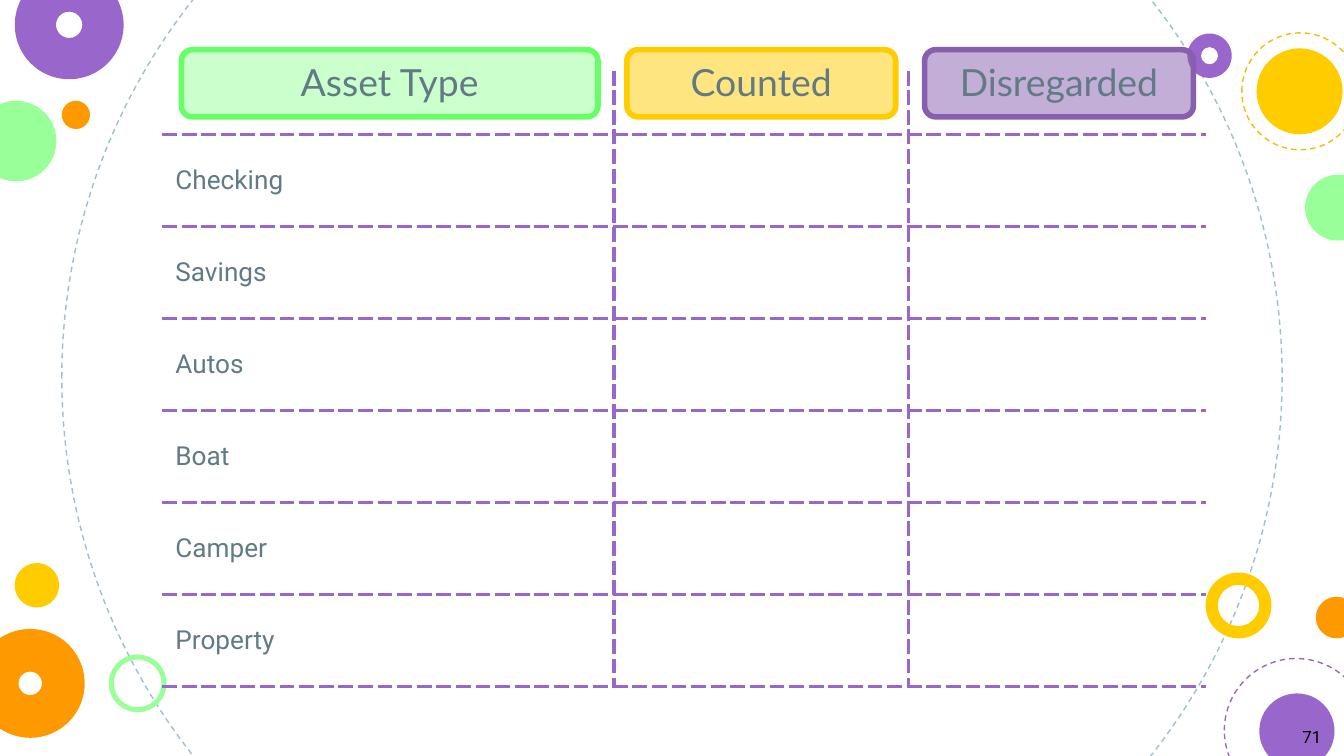
from lxml.etree import SubElement
from pptx import Presentation
from pptx.dml.color import RGBColor
from pptx.enum.dml import MSO_LINE_DASH_STYLE as Dash
from pptx.enum.shapes import MSO_SHAPE as Shape
from pptx.enum.text import MSO_ANCHOR as Anchor, PP_ALIGN as Align
from pptx.oxml.ns import qn
from pptx.util import Pt

PX = 4572
color = RGBColor.from_string
PURPLE, GREEN, YELLOW, ORANGE = "9966CC", "99FF99", "FFCC00", "FF9900"
SLATE = "617A86"


def add_shape(kind, box, fill=None, line=None, width=0.75):
    shape = slide.shapes.add_shape(kind, *[value * PX for value in box])
    shape.shadow.inherit = False
    if fill:
        shape.fill.solid()
        shape.fill.fore_color.rgb = color(fill)
    else:
        shape.fill.background()
    if line:
        shape.line.color.rgb = color(line)
        shape.line.width = Pt(width)
    else:
        shape.line.fill.background()
    return shape


def write(frame, text, size, font, text_color, align=Align.LEFT):
    paragraph = frame.paragraphs[0]
    paragraph.alignment = align
    run = paragraph.add_run()
    run.text = text
    for name, value in {"size": Pt(size), "name": font}.items():
        setattr(run.font, name, value)
    run.font.color.rgb = color(text_color)


presentation = Presentation()
presentation.slide_width = 2000 * PX
presentation.slide_height = 1125 * PX
slide = presentation.slides.add_slide(presentation.slide_layouts[6])

circles = [
    (92, -346, 1816, "ring", "A1BECC"),
    (-36, 150, 120, "disc", GREEN),
    (1794, 852, 98, 0.186, YELLOW),
    (22, -44, 162, 0.379, PURPLE),
    (92, 150, 42, "disc", ORANGE),
    (1822, 980, 214, "ring", PURPLE),
    (162, 974, 86, 0.088, GREEN),
    (1958, 888, 62, "disc", ORANGE),
    (-36, 936, 162, 0.392, ORANGE),
    (1874, 1032, 112, "disc", PURPLE),
    (1767, 50, 66, 0.306, PURPLE),
    (1870, 72, 128, "disc", YELLOW),
    (1942, 260, 98, "disc", GREEN),
    (1848, 49, 174, "ring", "F8BB00"),
    (22, 838, 66, "disc", YELLOW),
]
for left, top, size, style, circle_color in circles:
    box = (left, top, size, size)
    if style == "ring":
        add_shape(Shape.OVAL, box, line=circle_color).line.dash_style = Dash.DASH
    elif style == "disc":
        add_shape(Shape.OVAL, box, circle_color)
    else:
        add_shape(Shape.DONUT, box, circle_color).adjustments[0] = style

assets = ["", "Checking", "Savings", "Autos", "Boat", "Camper", "Property"]
column_widths = [673, 438, 442]
row_heights = [95] + [137] * 6
table = slide.shapes.add_table(
    len(assets), 3, 241 * PX, 105 * PX, sum(column_widths) * PX, sum(row_heights) * PX
).table
table.first_row = table.horz_banding = False
for column, width in zip(table.columns, column_widths):
    column.width = width * PX
for row_index, (row, height) in enumerate(zip(table.rows, row_heights)):
    row.height = height * PX
    for column_index, cell in enumerate(row.cells):
        cell.vertical_anchor = Anchor.MIDDLE
        sides = {"L": column_index > 0, "R": column_index < 2, "T": row_index > 0, "B": True}
        properties = cell._tc.get_or_add_tcPr()
        for side, visible in sides.items():
            border = SubElement(properties, qn(f"a:ln{side}"), w=str(Pt(2.25)))
            if visible:
                fill = SubElement(border, qn("a:solidFill"))
                SubElement(fill, qn("a:srgbClr"), val=PURPLE)
                SubElement(border, qn("a:prstDash"), val="sysDash")
            else:
                SubElement(border, qn("a:noFill"))
        cell.fill.background()
    if assets[row_index]:
        write(row.cells[0].text_frame, assets[row_index], 14, "Roboto", SLATE)

headers = [
    ("Asset Type", 270, 620, GREEN, "66FF66"),
    ("Counted", 933, 400, YELLOW, YELLOW),
    ("Disregarded", 1376, 400, "875FAF", "875FAF"),
]
for text, left, width, fill, line in headers:
    header = add_shape(Shape.ROUNDED_RECTANGLE, (left, 74, width, 100), fill, line, 3)
    fill_color = header.fill._xPr.find(qn("a:solidFill"))[0]
    SubElement(fill_color, qn("a:alpha"), val="50000")
    header.text_frame.vertical_anchor = Anchor.TOP
    write(header.text_frame, text, 20, "Lato", SLATE, Align.CENTER)

number_box = slide.shapes.add_textbox(1894 * PX, 1066 * PX, 92 * PX, 60 * PX)
number_box.text_frame.word_wrap = True
number_box.text_frame.vertical_anchor = Anchor.MIDDLE
write(number_box.text_frame, "71", 9, "Roboto", "000000", Align.RIGHT)

presentation.save("out.pptx")
